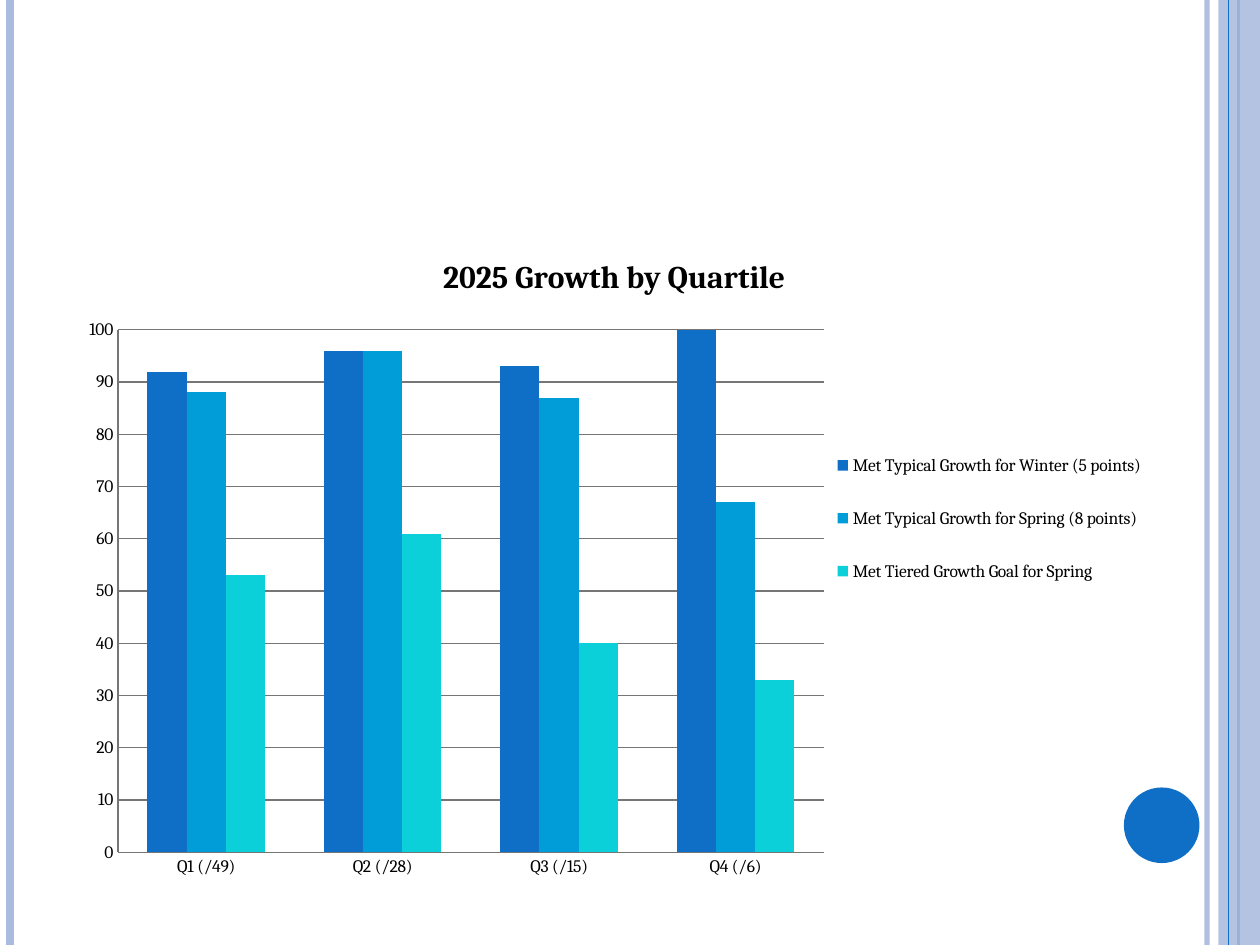
from lxml.etree import SubElement
from pptx import Presentation
from pptx.chart.data import CategoryChartData
from pptx.dml.color import RGBColor
from pptx.enum.chart import XL_CHART_TYPE as ChartType
from pptx.enum.chart import XL_LEGEND_POSITION as LegendPosition
from pptx.enum.chart import XL_TICK_MARK as TickMark
from pptx.enum.shapes import MSO_CONNECTOR as Connector
from pptx.enum.shapes import MSO_SHAPE as Shape
from pptx.oxml import parse_xml
from pptx.oxml.ns import nsdecls, qn
from pptx.util import Inches, Pt

COLORS = {"pale": "ABBBDF", "blue": "0F6FC6", "sky": "009DD9",
          "aqua": "0BD0D9", "grid": "767676", "text": "000000"}
FONT = "Cambria"


def set_alpha(element, percent):
    color = element.find(".//" + qn("a:srgbClr"))
    SubElement(color, qn("a:alpha"), val=str(percent * 1000))


def place_before(anchor, x, y, w, h, inner=False):
    """Insert a manual chart layout, in shares of the chart, before anchor."""
    parent = anchor.getparent()
    for old in parent.findall(qn("c:layout")):
        parent.remove(old)
    target = '<c:layoutTarget val="inner"/>' if inner else ""
    anchor.addprevious(parse_xml(
        f'<c:layout {nsdecls("c")}><c:manualLayout>{target}'
        '<c:xMode val="edge"/><c:yMode val="edge"/>'
        f'<c:x val="{x}"/><c:y val="{y}"/><c:w val="{w}"/><c:h val="{h}"/>'
        '</c:manualLayout></c:layout>'))


deck = Presentation()
deck.slide_width, deck.slide_height = Inches(10), Inches(7.5)
page = deck.slides.add_slide(deck.slide_layouts[6])
shapes = page.shapes

# Edge decoration, back to front; None stands for the wide band
for rule in [(9.58, "pale", 3, 93), (0.08, "pale", 4.5, 100),
             (9.83, "blue", 1.5, 100), None, (9.75, "blue", 0.75, 100)]:
    if rule is None:
        band = shapes.add_shape(Shape.RECTANGLE, Inches(9.67), 0,
                                Inches(0.33), deck.slide_height)
        band.shadow.inherit = False
        band.fill.solid()
        band.fill.fore_color.rgb = RGBColor.from_string(COLORS["pale"])
        band.line.fill.background()
        set_alpha(band.element.spPr, 87)
        continue
    left, color, width, alpha = rule
    line = shapes.add_connector(Connector.STRAIGHT, Inches(left), 0,
                                Inches(left), deck.slide_height)
    line.line.color.rgb = RGBColor.from_string(COLORS[color])
    line.line.width = Pt(width)
    if alpha < 100:
        set_alpha(line.element.spPr, alpha)
    SubElement(line.element.spPr, qn("a:effectLst"))

dot = shapes.add_shape(Shape.OVAL, Inches(8.92), Inches(6.25),
                       Inches(0.6), Inches(0.6))
dot.shadow.inherit = False
dot.fill.solid()
dot.fill.fore_color.rgb = RGBColor.from_string(COLORS["blue"])
dot.line.fill.background()

# Growth chart
growth = [
    ("Met Typical Growth for Winter (5 points)", "blue", [92, 96, 93, 100]),
    ("Met Typical Growth for Spring (8 points)", "sky", [88, 96, 87, 67]),
    ("Met Tiered Growth Goal for Spring", "aqua", [53, 61, 40, 33]),
]
data = CategoryChartData()
data.categories = ["Q1 (/49)", "Q2 (/28)", "Q3 (/15)", "Q4 (/6)"]
for name, _, values in growth:
    data.add_series(name, values)
chart = shapes.add_chart(ChartType.COLUMN_CLUSTERED, Inches(0.5), Inches(1.83),
                         Inches(8.75), Inches(5.25), data).chart
chart.font.name, chart.font.size = FONT, Pt(10)
chart.font.color.rgb = RGBColor.from_string(COLORS["text"])

chart.has_title = True
title = chart.chart_title.text_frame
title.text = "2025 Growth by Quartile"
title_font = title.paragraphs[0].font
title_font.name, title_font.size, title_font.bold = FONT, Pt(18), True
title_font.color.rgb = RGBColor.from_string(COLORS["text"])

plot = chart.plots[0]
plot.gap_width, plot.overlap = 150, 0
plot.vary_by_categories = False
for series, (_, color, _) in zip(plot.series, growth):
    series.format.fill.solid()
    series.format.fill.fore_color.rgb = RGBColor.from_string(COLORS[color])

scale = chart.value_axis
scale.minimum_scale, scale.maximum_scale, scale.major_unit = 0, 100, 10
scale.has_major_gridlines = True
for axis in (chart.category_axis, scale):
    axis.major_tick_mark = axis.minor_tick_mark = TickMark.NONE
for part in (chart.category_axis, scale, scale.major_gridlines):
    part.format.line.color.rgb = RGBColor.from_string(COLORS["grid"])
    part.format.line.width = Pt(0.75)

chart.has_legend = True
chart.legend.position = LegendPosition.RIGHT
chart.legend.include_in_layout = False
place_before(chart.element.find(".//" + qn("c:barChart")),
             0.05, 0.15, 0.64, 0.79, inner=True)
place_before(chart.element.find(".//" + qn("c:legend") + "/" + qn("c:overlay")),
             0.69, 0.29, 0.3, 0.29)

deck.save("out.pptx")
